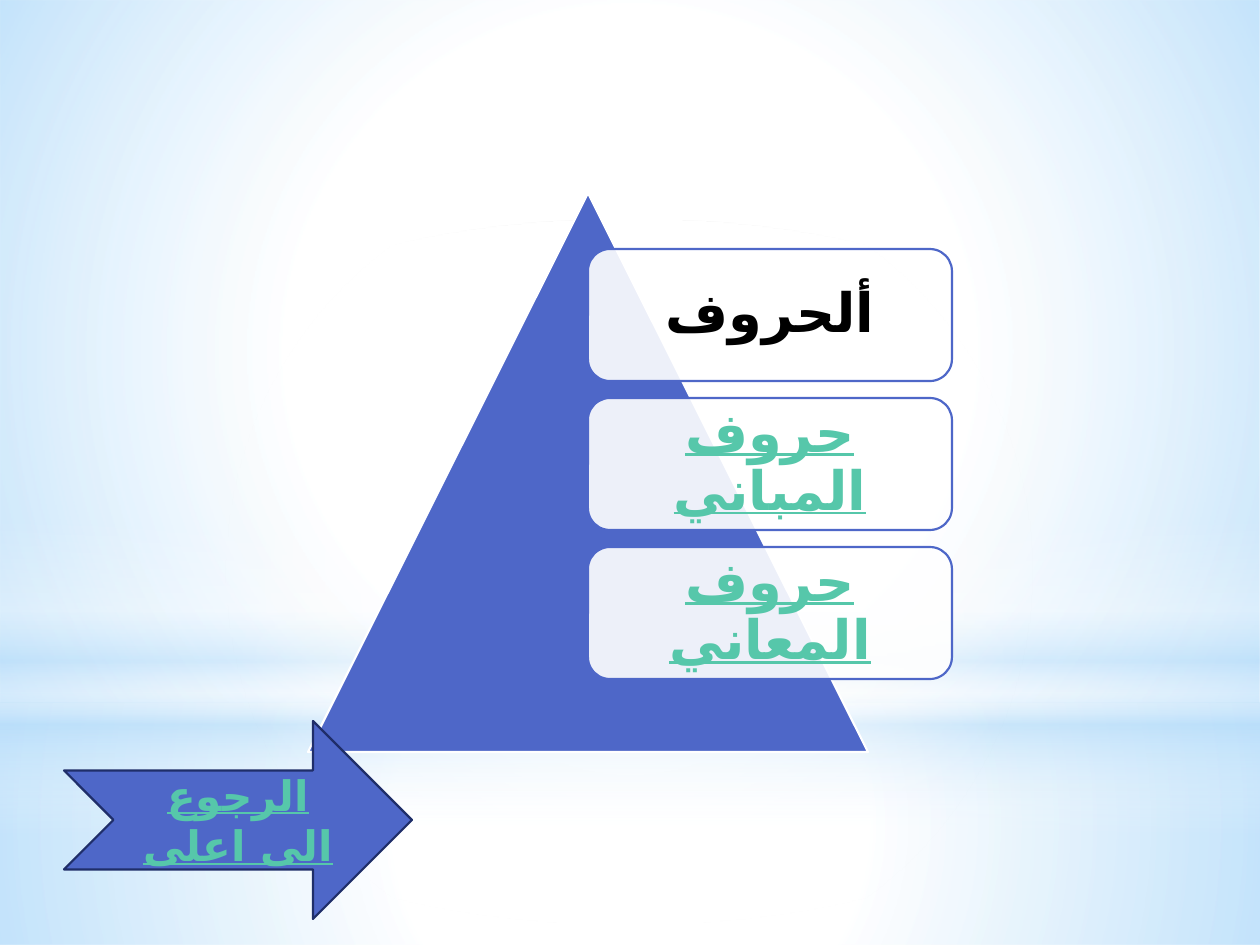
from lxml.etree import SubElement
from pptx import Presentation
from pptx.dml.color import RGBColor
from pptx.enum.shapes import MSO_SHAPE as Shape
from pptx.enum.text import MSO_ANCHOR as Anchor, PP_ALIGN as Align
from pptx.oxml.ns import qn
from pptx.util import Pt

PX_PER_INCH = 126
FONT = "Lato"
ARABIC_FONT = "DejaVu Sans"  # Lato has no Arabic letters
COLORS = {
    "white": "FFFFFF",
    "sky": "B4DCFA",
    "blue": "4E67C8",
    "navy": "1F2E69",
    "black": "000000",
    "green": "56C7AA",
}


def px(length):
    return round(length * 914400 / PX_PER_INCH)


def rgb(name):
    return RGBColor.from_string(COLORS[name])


def add_alpha(color, percent):
    SubElement(color, qn("a:alpha"), val=str(percent * 1000))


def add_shape(page, kind, left, top, width, height, fill=None, line=None):
    shape = page.shapes.add_shape(kind, px(left), px(top), px(width), px(height))
    shape.shadow.inherit = False
    if fill:
        shape.fill.solid()
        shape.fill.fore_color.rgb = rgb(fill)
    if line:
        shape.line.color.rgb = rgb(line)
        shape.line.width = Pt(1.25)
    else:
        shape.line.fill.background()
    return shape


def add_glow(page, kind, top, height, stops, radial=True):
    """Add a full-width gradient; stops are (position %, colour, opacity %)."""
    glow = add_shape(page, kind, 0, top, 1260, height)
    glow.fill.gradient()
    gradient = glow.fill._xPr.find(qn("a:gradFill"))
    for child in list(gradient):
        gradient.remove(child)
    stop_list = SubElement(gradient, qn("a:gsLst"))
    for position, color, opacity in stops:
        stop = SubElement(stop_list, qn("a:gs"), pos=str(position * 1000))
        add_alpha(SubElement(stop, qn("a:srgbClr"), val=COLORS[color]), opacity)
    if radial:
        shade = SubElement(gradient, qn("a:path"), path="circle")
        SubElement(shade, qn("a:fillToRect"), l="50000", t="50000", r="50000", b="50000")
    else:
        SubElement(gradient, qn("a:lin"), ang="5400000", scaled="0")


def write_label(shape, text, size, color, underline):
    """Write centred, bold, right-to-left text in a shape."""
    frame = shape.text_frame
    frame.word_wrap = True
    frame.vertical_anchor = Anchor.MIDDLE
    frame.text = text
    para = frame.paragraphs[0]
    para.alignment = Align.CENTER
    para._p.get_or_add_pPr().set("rtl", "1")
    span = para.runs[0]
    font = span.font
    font.size = Pt(size)
    font.bold = True
    font.underline = underline
    font.color.rgb = rgb(color)
    font.name = FONT
    SubElement(span._r.get_or_add_rPr(), qn("a:cs"), typeface=ARABIC_FONT)


def add_card(page, top, text, color, underline):
    card = add_shape(page, Shape.ROUNDED_RECTANGLE, 588, top, 364, 132, "white", "blue")
    add_alpha(card.fill._xPr.find(qn("a:solidFill"))[0], 90)
    write_label(card, text, 31, color, underline)
    frame = card.text_frame
    frame.margin_left = frame.margin_right = px(16)
    frame.margin_top = frame.margin_bottom = px(16)
    frame.paragraphs[0].line_spacing = 0.9


def add_background(page):
    add_glow(page, Shape.RECTANGLE, 703, 242,
             [(0, "white", 91), (37, "white", 76), (100, "sky", 79)])
    add_glow(page, Shape.RECTANGLE, 0, 703,
             [(0, "white", 89), (48, "white", 62), (100, "sky", 79)])
    add_glow(page, Shape.RECTANGLE, 519, 315,
             [(0, "white", 0), (29, "white", 30), (45, "sky", 40),
              (55, "white", 26), (65, "sky", 60), (100, "white", 0)], radial=False)
    add_glow(page, Shape.OVAL, 220, 703, [(0, "white", 100), (56, "white", 0)])


def main():
    deck = Presentation()
    deck.slide_width, deck.slide_height = px(1260), px(945)
    page = deck.slides.add_slide(deck.slide_layouts[6])
    page.background.fill.solid()
    page.background.fill.fore_color.rgb = rgb("white")
    add_background(page)

    add_shape(page, Shape.ISOSCELES_TRIANGLE, 308, 193, 560, 559, "blue", "white")
    cards = [
        ("ألحروف", "black", False),
        ("حروف المباني", "green", True),
        ("حروف المعاني", "green", True),
    ]
    for row, (text, color, underline) in enumerate(cards):
        add_card(page, 249 + row * 149, text, color, underline)

    back_arrow = add_shape(page, Shape.NOTCHED_RIGHT_ARROW, 64, 721, 348, 198, "blue", "navy")
    write_label(back_arrow, "الرجوع الى اعلى", 24, "green", True)
    deck.save("out.pptx")


if __name__ == "__main__":
    main()
